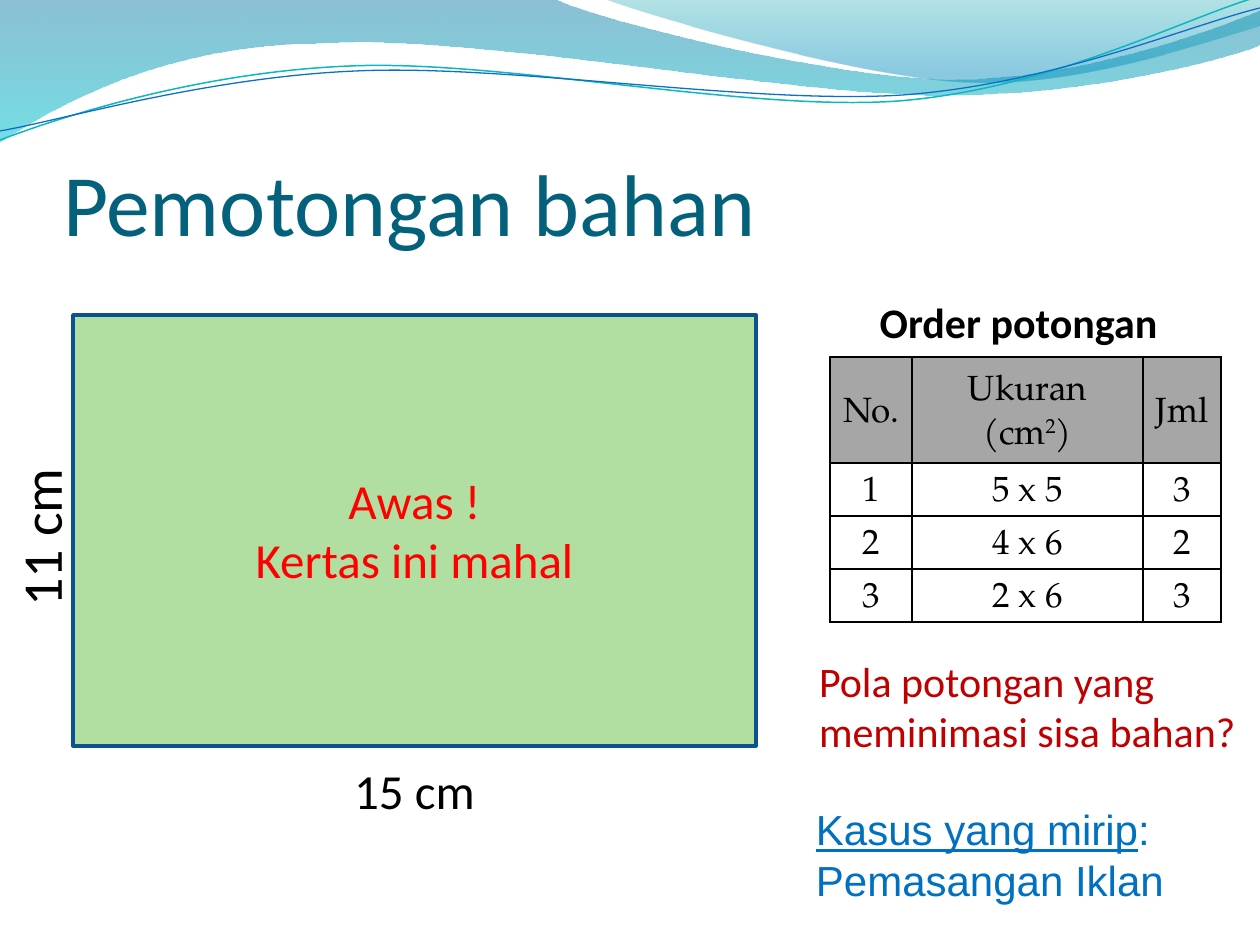
"""Build the slide about cutting material with the least waste."""
import lxml.etree
import pptx
import pptx.dml.color
import pptx.enum.shapes
import pptx.enum.text
import pptx.oxml.ns
import pptx.util

PX = 914400 / 126
CENTER = pptx.enum.text.PP_ALIGN.CENTER
LEFT = pptx.enum.text.PP_ALIGN.LEFT
BOTTOM = pptx.enum.text.MSO_ANCHOR.BOTTOM
MIDDLE = pptx.enum.text.MSO_ANCHOR.MIDDLE
TOP = pptx.enum.text.MSO_ANCHOR.TOP

BANDS = [
    ([(0, -1)], [(554, -1)], [(600, 21), (837, 79), (955, 79)],
     [(1075, 79), (1207, 33), (1260, 11)], [(1261, 45)],
     [(1239, 55), (1096, 96), (940, 95)], [(784, 95), (481, 35), (324, 43)],
     [(163, 44), (58, 105), (-1, 142)]),
    ([(604, -1)], [(641, 14), (859, 78), (969, 82)],
     [(1079, 87), (1211, 40), (1260, 26)], [(1260, 0)]),
]
BAND_STOPS = [
    [(0, "0074A1", 45), (1, "00C6CF", 55)],
    [(0, "00A1A9", 30), (0.8, "008BBF", 45)],
]
WAVES = [
    ("0AB8BF", 0.85, ([(0, 140)], [(60, 117), (199, 72), (349, 66)],
                      [(498, 59), (747, 112), (898, 101)],
                      [(1050, 89), (1182, 19), (1257, -3)])),
    ("0F6FC6", 0.75, ([(0, 131)], [(59, 121), (207, 77), (357, 71)],
                      [(508, 64), (752, 105), (903, 95)],
                      [(1053, 84), (1187, 26), (1260, 8)])),
]
TITLE = "Pemotongan bahan"
PAPER = (73, 315, 683, 431)
LABELS = [
    ((73, 746, 683, 73), ["15 cm"], dict(size=28, align=CENTER)),
    ((0, 319, 73, 431), ["11 cm"], dict(size=32, align=CENTER, vert="vert270")),
    ((73, 462, 683, 126), ["Awas !", "Kertas ini mahal"],
     dict(size=28, color="FF0000", align=CENTER)),
    ((819, 294, 399, 53), ["Order potongan"], dict(size=24, bold=True, align=CENTER)),
    ((819, 651, 420, 105), ["Pola potongan yang meminimasi sisa bahan?"],
     dict(size=24, color="C00000")),
    ((803, 798, 377, 115),
     [[("Kasus yang mirip", {"underline": True}), (":", {})], "Pemasangan Iklan"],
     dict(size=24, font="Arial", color="0070C0", anchor=TOP,
          insets=(13, 6, 13, 6), wrap=False)),
]
ORDERS = [
    ["No.", [("Ukuran (cm", {}), ("2", {"baseline": 30}), (")", {})], "Jml"],
    ["1", "5 x 5", "3"],
    ["2", "4 x 6", "2"],
    ["3", "2 x 6", "3"],
]
COLUMN_WIDTHS = [82, 231, 78]
ROW_HEIGHTS = [106, 53, 53, 53]


def px(value):
    return pptx.util.Emu(round(value * PX))


def rgb(code):
    return pptx.dml.color.RGBColor.from_string(code)


def add_xml(parent, tag, **attributes):
    return lxml.etree.SubElement(parent, pptx.oxml.ns.qn(tag), attributes)


def put_text(frame, paragraphs, size, font="Calibri", color="000000", bold=False,
             align=LEFT, anchor=BOTTOM, insets=(0, 6, 0, 0), wrap=True,
             vert=None, line_spacing=None):
    if anchor is not None:
        frame.vertical_anchor = anchor
        frame.margin_left, frame.margin_top, frame.margin_right, frame.margin_bottom = map(px, insets)
        frame.word_wrap = wrap
    if vert:
        frame._txBody.bodyPr.set("vert", vert)
    for index, spans in enumerate(paragraphs):
        para = frame.add_paragraph() if index else frame.paragraphs[0]
        para.alignment = align
        if line_spacing:
            para.line_spacing = line_spacing
        for text, extra in [(spans, {})] if isinstance(spans, str) else spans:
            span = para.add_run()
            span.text = text
            span.font.name = font
            span.font.size = pptx.util.Pt(size)
            span.font.bold = bold
            span.font.color.rgb = rgb(color)
            if extra.get("underline"):
                span.font.underline = True
            if "baseline" in extra:
                span.font._element.set("baseline", str(extra["baseline"] * 1000))


def add_outline(slide, segments, close):
    points = [(px(x), px(y)) for segment in segments for x, y in segment]
    builder = slide.shapes.build_freeform(*points[0], scale=1.0)
    builder.add_line_segments(points[1:], close=close)
    shape = builder.convert_to_shape()
    shape.shadow.inherit = False
    lines = iter(list(shape._element.iter(pptx.oxml.ns.qn("a:lnTo"))))
    for segment in segments[1:]:
        parts = [next(lines) for _ in segment]
        if len(parts) == 3:
            parts[0].tag = pptx.oxml.ns.qn("a:cubicBezTo")
            for part in parts[1:]:
                parts[0].append(part[0])
                part.getparent().remove(part)
    return shape


def add_waves(slide):
    for segments, stops in zip(BANDS, BAND_STOPS):
        band = add_outline(slide, segments, True)
        band.line.fill.background()
        band.fill.gradient()
        band.fill.gradient_angle = 270
        for stop, (position, color, opacity) in zip(band.fill.gradient_stops, stops):
            stop.position = position
            stop.color.rgb = rgb(color)
            add_xml(stop._gs[0], "a:alpha", val=str(opacity * 1000))
    for color, width, segments in WAVES:
        wave = add_outline(slide, segments, False)
        wave.fill.background()
        wave.line.color.rgb = rgb(color)
        wave.line.width = pptx.util.Pt(width)


def add_orders(slide):
    frame = slide.shapes.add_table(len(ORDERS), len(COLUMN_WIDTHS), px(830), px(357),
                                   px(sum(COLUMN_WIDTHS)), px(sum(ROW_HEIGHTS)))
    table = frame.table
    table.first_row = table.horz_banding = False
    for column, width in zip(table.columns, COLUMN_WIDTHS):
        column.width = px(width)
    for row_index, (row, height) in enumerate(zip(ORDERS, ROW_HEIGHTS)):
        table.rows[row_index].height = px(height)
        for column_index, content in enumerate(row):
            cell = table.cell(row_index, column_index)
            cell.vertical_anchor = MIDDLE
            cell.margin_left = cell.margin_right = px(9)
            cell.margin_top = cell.margin_bottom = 0
            put_text(cell.text_frame, [content], size=20, font="TeX Gyre Pagella",
                     align=CENTER, anchor=None, line_spacing=1.25)
            properties = cell._tc.get_or_add_tcPr()
            for side in ("a:lnL", "a:lnR", "a:lnT", "a:lnB"):
                border = add_xml(properties, side, w="12700")
                add_xml(add_xml(border, "a:solidFill"), "a:srgbClr", val="000000")
            if row_index == 0:
                cell.fill.solid()
                cell.fill.fore_color.rgb = rgb("A6A6A6")
            else:
                cell.fill.background()


def main():
    deck = pptx.Presentation()
    deck.slide_width, deck.slide_height = px(1260), px(945)
    slide = deck.slides.add_slide(deck.slide_layouts[5])
    add_waves(slide)

    title = slide.shapes.title
    title.left, title.top, title.width, title.height = map(px, (63, 97, 1144, 157))
    put_text(title.text_frame, [TITLE], size=50, color="04617B")
    slide.shapes._spTree.append(title._element)

    paper = slide.shapes.add_shape(pptx.enum.shapes.MSO_SHAPE.RECTANGLE, *map(px, PAPER))
    paper.shadow.inherit = False
    paper.fill.solid()
    paper.fill.fore_color.rgb = rgb("B0DFA1")
    paper.line.color.rgb = rgb("0B5292")
    paper.line.width = pptx.util.Pt(2)

    for place, paragraphs, style in LABELS:
        box = slide.shapes.add_textbox(*map(px, place))
        put_text(box.text_frame, paragraphs, **style)
    add_orders(slide)
    deck.save("out.pptx")


if __name__ == "__main__":
    main()
